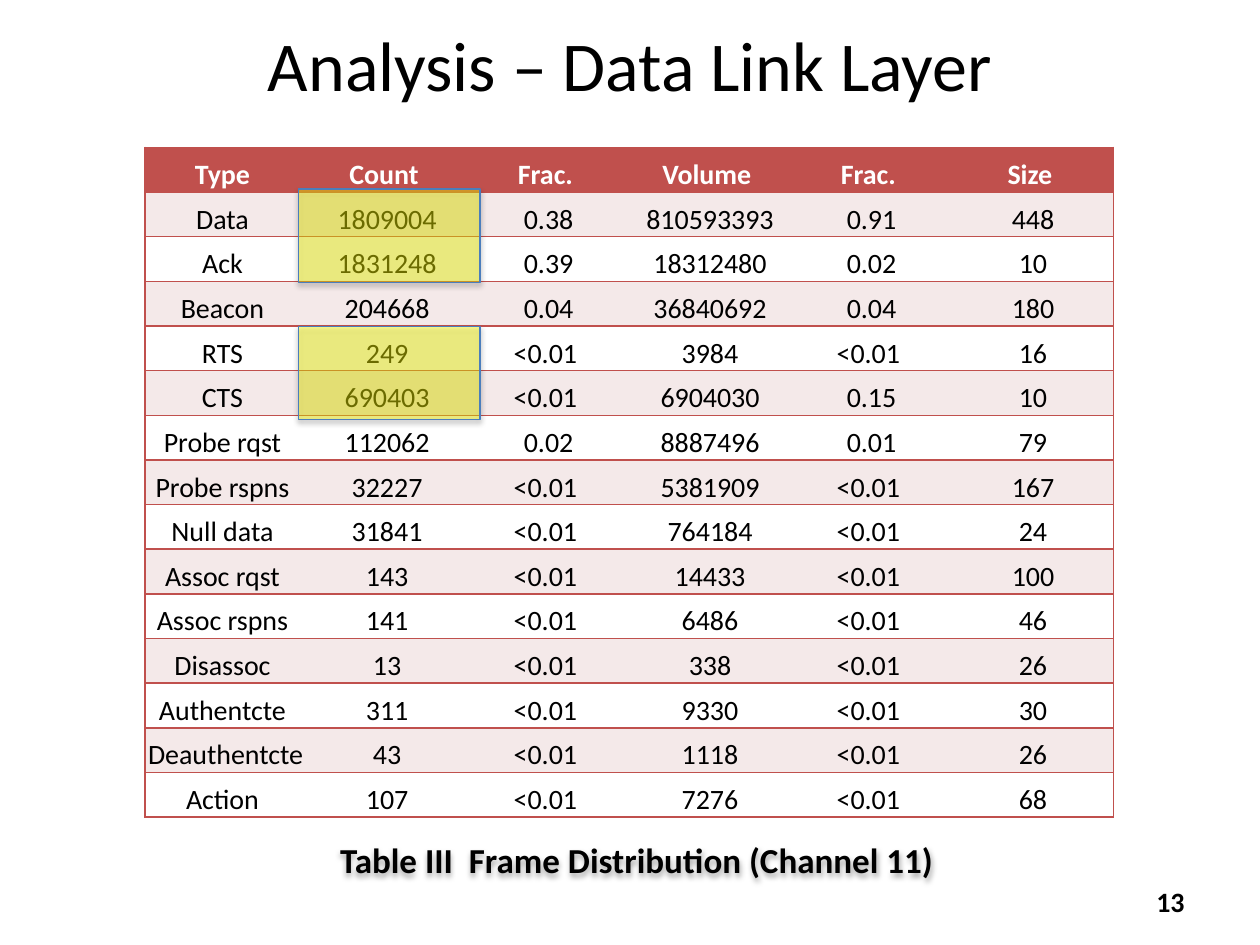
from lxml import etree
from pptx import Presentation
from pptx.dml.color import RGBColor
from pptx.enum import shapes, text
from pptx.oxml import parse_xml
from pptx.oxml.ns import nsdecls, qn
from pptx.util import Inches, Pt

RED = RGBColor(0xC0, 0x50, 0x4D)
PINK = RGBColor(0xF4, 0xE9, 0xE9)
WHITE = RGBColor(0xFF, 0xFF, 0xFF)
BLACK = RGBColor(0, 0, 0)
YELLOW = RGBColor(0xFF, 0xFF, 0)
BLUE = RGBColor(0x4B, 0x7E, 0xBC)
FONT = "Calibri"

TITLE = "Analysis – Data Link Layer"
CAPTION = "Table III  Frame Distribution (Channel 11) "
PAGE = "13"
LOW = "<0.01 "
FRAMES = [
    ("Type ", "Count ", "Frac. ", "Volume ", "Frac. ", "Size "),
    ("Data ", "1809004", "0.38", "810593393", "0.91", "448"),
    ("Ack ", "1831248", "0.39", "18312480", "0.02", "10"),
    ("Beacon ", "204668", "0.04", "36840692", "0.04", "180"),
    ("RTS ", "249", LOW, "3984", LOW, "16"),
    ("CTS ", "690403", LOW, "6904030", "0.15", "10"),
    ("Probe rqst ", "112062", "0.02", "8887496", "0.01", "79"),
    ("Probe rspns ", "32227", LOW, "5381909", LOW, "167"),
    ("Null data ", "31841", LOW, "764184", LOW, "24"),
    ("Assoc rqst ", "143", LOW, "14433", LOW, "100"),
    ("Assoc rspns ", "141", LOW, "6486", LOW, "46"),
    ("Disassoc ", "13", LOW, "338", LOW, "26"),
    ("Authentcte ", "311", LOW, "9330", LOW, "30"),
    ("Deauthentcte ", "43", LOW, "1118", LOW, "26"),
    ("Action ", "107", LOW, "7276", LOW, "68"),
]
TABLE_BOX = (1.15, 1.17, 7.69, 5.32)
HIGHLIGHT_TOPS = (1.5, 2.59)


def write(paragraph, words, size, color, bold, align):
    paragraph.text = words
    paragraph.alignment = align
    font = paragraph.font
    font.name, font.size, font.bold = FONT, Pt(size), bold
    font.color.rgb = color


def add_label(slide, box, words, size, bold=True, align=text.PP_ALIGN.CENTER):
    label = slide.shapes.add_textbox(*map(Inches, box))
    frame = label.text_frame
    frame.word_wrap = True
    frame.vertical_anchor = text.MSO_ANCHOR.MIDDLE
    write(frame.paragraphs[0], words, size, BLACK, bold, align)
    return label


def add_shadow(shape):
    """Give the shape a soft black shadow straight below it."""
    shape.shadow.inherit = False
    effects = shape._element.spPr.find(qn("a:effectLst"))
    effects.append(parse_xml(
        f'<a:outerShdw {nsdecls("a")} blurRad="{Pt(3.1)}" dist="{Pt(1.8)}" '
        'dir="5400000" rotWithShape="0"><a:srgbClr val="000000">'
        '<a:alpha val="35000"/></a:srgbClr></a:outerShdw>'))


def set_borders(cell, visible):
    """Draw red lines on the visible sides (from L, R, T, B), none on the rest."""
    properties = cell._tc.get_or_add_tcPr()
    for side in "LRTB":
        line = etree.SubElement(properties, qn(f"a:ln{side}"))
        if side in visible:
            line.set("w", str(Pt(1)))
            fill = etree.SubElement(line, qn("a:solidFill"))
            etree.SubElement(fill, qn("a:srgbClr")).set("val", str(RED))
        else:
            etree.SubElement(line, qn("a:noFill"))


def add_frame_table(slide):
    rows, columns = len(FRAMES), len(FRAMES[0])
    left, top, width, height = map(Inches, TABLE_BOX)
    table = slide.shapes.add_table(rows, columns, left, top, width, height).table
    for column in table.columns:
        column.width = width // columns
    for row in table.rows:
        row.height = height // rows
    for r, values in enumerate(FRAMES):
        header = r == 0
        for c, value in enumerate(values):
            cell = table.cell(r, c)
            sides = "TB" + ("L" if c == 0 else "") + ("R" if c == columns - 1 else "")
            set_borders(cell, sides)
            cell.fill.solid()
            cell.fill.fore_color.rgb = RED if header else PINK if r % 2 else WHITE
            cell.margin_left = cell.margin_right = cell.margin_top = Inches(0.01)
            cell.margin_bottom = 0
            cell.vertical_anchor = text.MSO_ANCHOR.BOTTOM
            write(cell.text_frame.paragraphs[0], value, 16,
                  WHITE if header else BLACK, header, text.PP_ALIGN.CENTER)


def add_highlight(slide, top):
    highlight = slide.shapes.add_shape(
        shapes.MSO_SHAPE.RECTANGLE, *map(Inches, (2.37, top, 1.44, 0.74)))
    highlight.fill.solid()
    highlight.fill.fore_color.rgb = YELLOW
    tint = highlight._element.spPr.find(qn("a:solidFill"))[0]
    etree.SubElement(tint, qn("a:alpha")).set("val", "42000")
    highlight.line.color.rgb = BLUE
    highlight.line.width = Pt(0.75)
    add_shadow(highlight)


def main():
    deck = Presentation()
    deck.slide_width, deck.slide_height = Inches(10), Inches(7.5)
    slide = deck.slides.add_slide(deck.slide_layouts[6])
    add_label(slide, (0.5, 0, 9, 1.01), TITLE, 40, bold=False)
    add_frame_table(slide)
    for top in HIGHLIGHT_TOPS:
        add_highlight(slide, top)
    add_label(slide, (7.17, 6.95, 2.33, 0.4), PAGE, 16, align=text.PP_ALIGN.RIGHT)
    add_shadow(add_label(slide, (2.31, 6.49, 5.55, 0.66), CAPTION, 20))
    deck.save("out.pptx")


if __name__ == "__main__":
    main()
